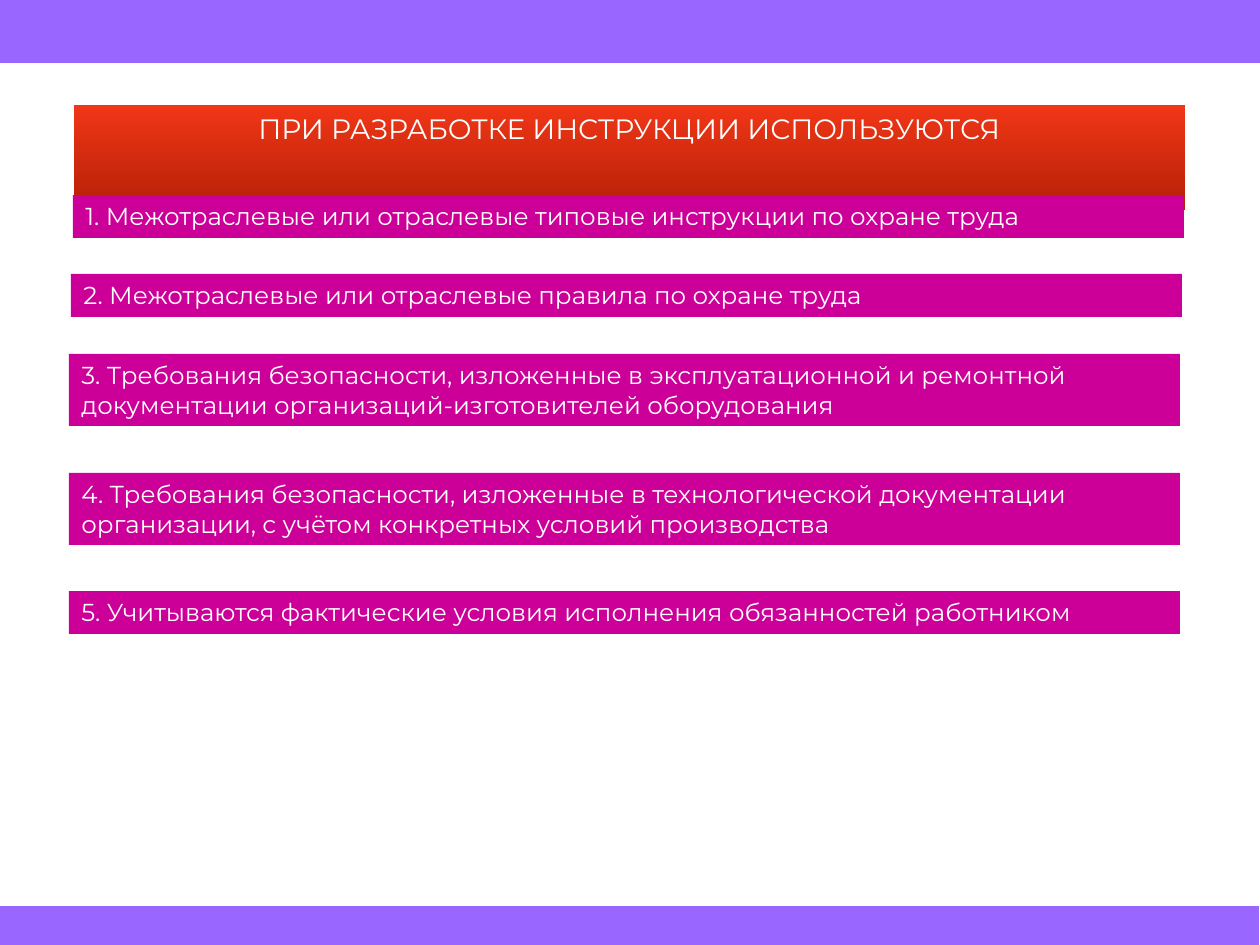
from dataclasses import dataclass

from pptx import Presentation
from pptx.dml.color import RGBColor
from pptx.enum.shapes import MSO_SHAPE
from pptx.enum.text import MSO_ANCHOR, MSO_AUTO_SIZE, PP_ALIGN
from pptx.util import Emu, Inches, Pt

RECT = MSO_SHAPE.RECTANGLE
TOP = MSO_ANCHOR.TOP
GROW = MSO_AUTO_SIZE.SHAPE_TO_FIT_TEXT
LEFT, CENTER = PP_ALIGN.LEFT, PP_ALIGN.CENTER

PX_PER_INCH = 126
FONT = "Montserrat"
WHITE, VIOLET, MAGENTA = "FFFFFF", "9966FF", "CC0099"
TITLE_GRADIENT = ("F03617", "B52007")
TITLE_ONLY = 5
BOX_W = 1111
ONE_LINE, TWO_LINES = 43, 72


@dataclass
class Box:
    x: int
    y: int
    w: int
    h: int


@dataclass
class Item:
    box: Box
    text: str


BANDS = [Box(0, 0, 1260, 63), Box(-1, 906, 1260, 43)]
TITLE_BOX = Box(74, 105, BOX_W, 47)
TITLE = "ПРИ РАЗРАБОТКЕ ИНСТРУКЦИИ ИСПОЛЬЗУЮТСЯ"
ITEMS = [
    Item(Box(73, 195, BOX_W, ONE_LINE),
         "1. Межотраслевые или отраслевые типовые инструкции по охране труда"),
    Item(Box(71, 274, BOX_W, ONE_LINE),
         "2. Межотраслевые или отраслевые правила по охране труда"),
    Item(Box(69, 354, BOX_W, TWO_LINES),
         "3. Требования безопасности, изложенные в эксплуатационной и ремонтной "
         "документации организаций-изготовителей оборудования"),
    Item(Box(69, 473, BOX_W, TWO_LINES),
         "4. Требования безопасности, изложенные в технологической документации "
         "организации, с учётом конкретных условий производства"),
    Item(Box(69, 591, BOX_W, ONE_LINE),
         "5. Учитываются фактические условия исполнения обязанностей работником"),
]


def px(n: int) -> Emu:
    return Inches(n / PX_PER_INCH)


def color(value: str) -> RGBColor:
    return RGBColor.from_string(value)


def add_rect(s, box: Box, fill: str):
    sp = s.shapes.add_shape(RECT, px(box.x), px(box.y), px(box.w), px(box.h))
    sp.shadow.inherit = False
    sp.fill.solid()
    sp.fill.fore_color.rgb = color(fill)
    sp.line.fill.background()
    return sp


def set_text(sp, text: str, size: int, align: PP_ALIGN) -> None:
    tf = sp.text_frame
    tf.text = text
    tf.word_wrap = True
    tf.auto_size = GROW
    tf.vertical_anchor = TOP
    p = tf.paragraphs[0]
    p.alignment = align
    p.font.name = FONT
    p.font.size = Pt(size)
    p.font.color.rgb = color(WHITE)


def fill_title(s) -> None:
    sp = s.shapes.title
    box = TITLE_BOX
    sp.left, sp.top, sp.width, sp.height = map(px, (box.x, box.y, box.w, box.h))
    sp.fill.gradient()
    sp.fill.gradient_angle = 270
    for stop, position, value in zip(sp.fill.gradient_stops, (0, 1), TITLE_GRADIENT):
        stop.position = position
        stop.color.rgb = color(value)
    set_text(sp, TITLE, 16, CENTER)


def main() -> None:
    prs = Presentation()
    prs.slide_width, prs.slide_height = Inches(10), Inches(7.5)
    s = prs.slides.add_slide(prs.slide_layouts[TITLE_ONLY])
    for band in BANDS:
        add_rect(s, band, VIOLET)
    fill_title(s)
    for item in ITEMS:
        set_text(add_rect(s, item.box, MAGENTA), item.text, 14, LEFT)
    prs.save("out.pptx")


if __name__ == "__main__":
    main()
